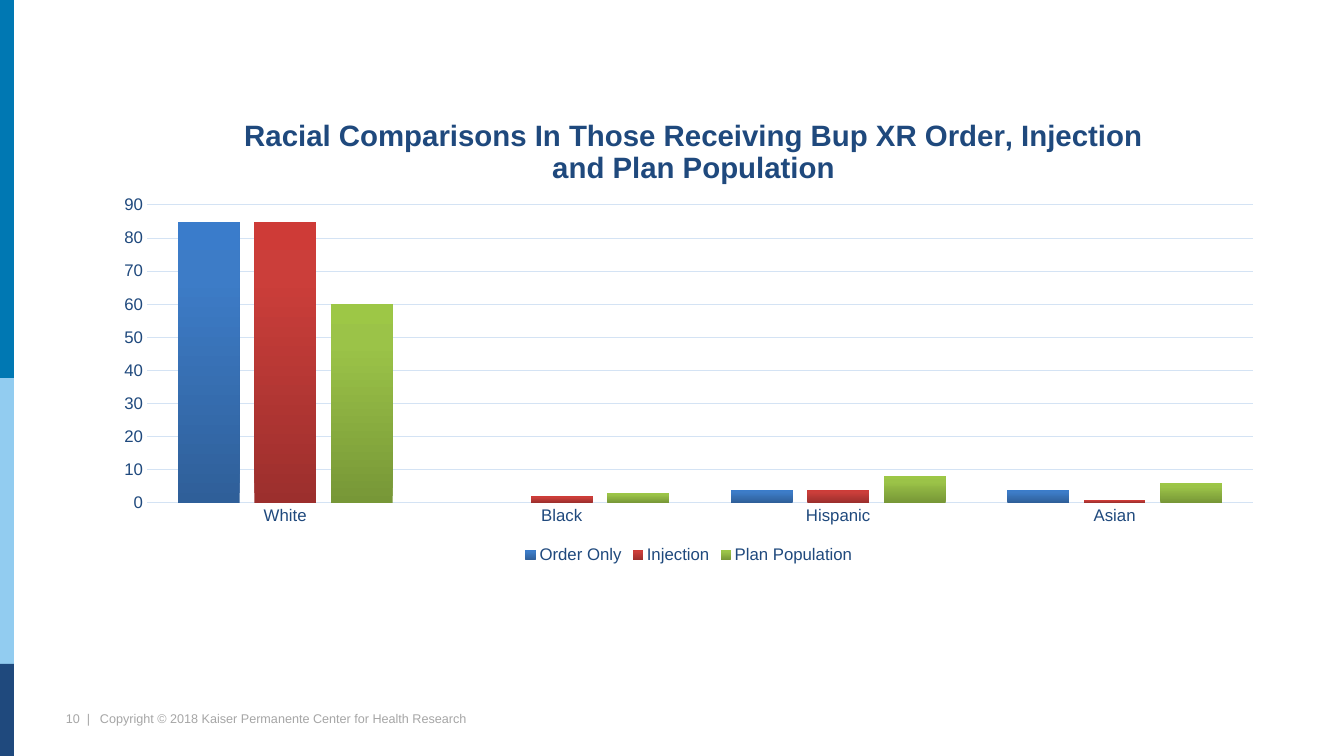
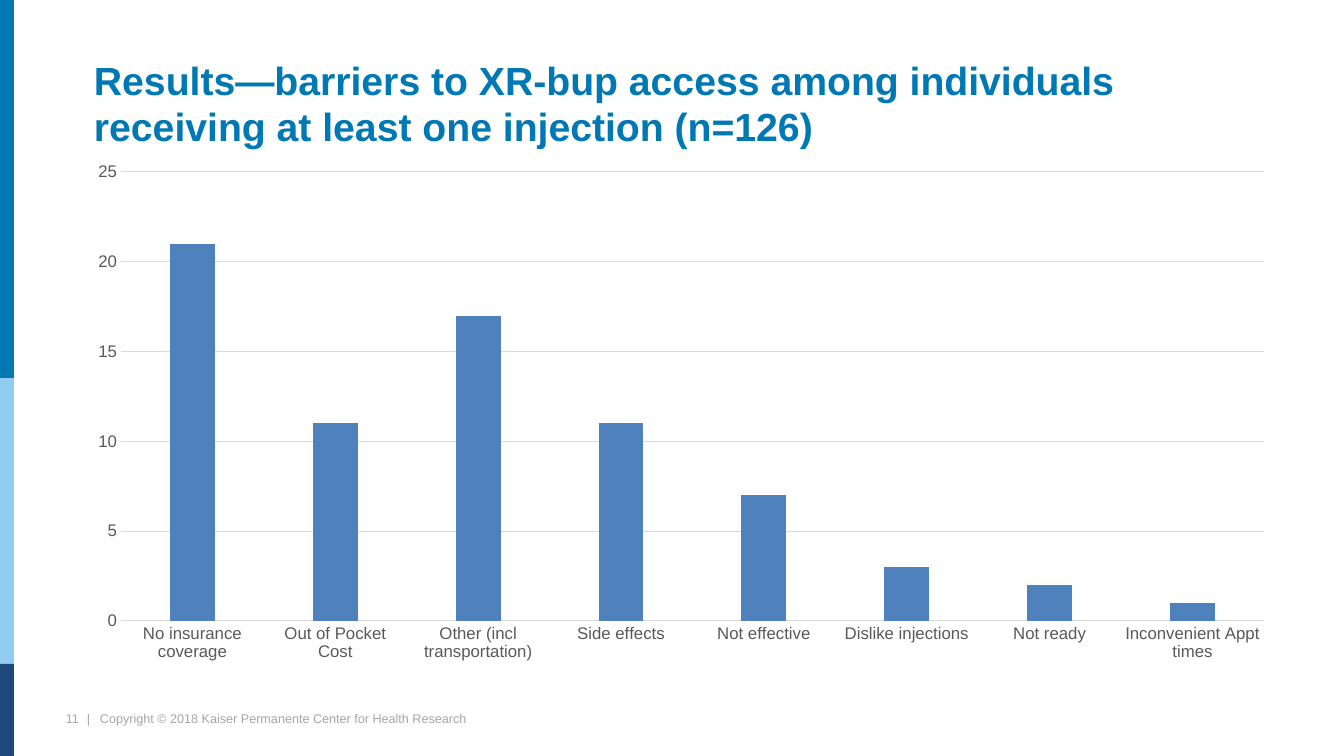
from pptx import Presentation, util as u
from pptx.chart.data import CategoryChartData
from pptx.dml.color import RGBColor
from pptx.enum import chart as ch, shapes, text
from pptx.oxml import parse_xml
from pptx.oxml.ns import nsdecls, qn

# Content
FOOT = "Copyright © 2018 Kaiser Permanente Center for Health Research"
RACE = dict(
    page=10,
    head=None,
    box=(101, 89, 1176, 479),
    plot=(147, 205, 1106, 298),
    title="Racial Comparisons In Those Receiving Bup XR Order, Injection and Plan Population",
    spot=(239, 111),
    cats=["White", "Black", "Hispanic", "Asian"],
    rows=[("Order Only", [85, 0, 4, 4], "blue"),
          ("Injection", [85, 2, 4, 1], "red"),
          ("Plan Population", [60, 3, 8, 6], "green")],
    top=90, step=10, gap=100, lap=-24, ink="navy", grid="ice",
)
BARS = dict(
    page=11,
    head="Results—barriers to XR-bup access among individuals "
         "receiving at least one injection (n=126)",
    box=(74, 153, 1215, 518),
    plot=(121, 172, 1143, 449),
    title=None,
    cats=["No insurance coverage", "Out of Pocket Cost",
          "Other (incl transportation)", "Side effects", "Not effective",
          "Dislike injections", "Not ready", "Inconvenient Appt times"],
    rows=[("Series 1", [21, 11, 17, 11, 7, 3, 2, 1], "steel")],
    top=25, step=5, gap=219, lap=-27, ink="gray", grid="mist",
)

# Theme
THEME = dict(
    font="Arial",
    size=dict(head=28, lead=33, title=21, axis=12, foot=9),
    color=dict(teal="0078B3", sky="92CCF0", navy="1F497D", ice="D4E3F4",
               gray="595959", mist="D9D9D9", foot="A6A6A6", steel="4F81BD"),
    grad=dict(blue=("2F5F99", "3D7CC7", "3A7CCB"),
              red=("9C2F2D", "CB3E3A", "CE3B37"),
              green=("779737", "9BC348", "9DC746")),
    stops=(0, 80, 100),
)
SIZE = THEME["size"]
BANDS = [("teal", 378), ("sky", 286), ("navy", 92)]
WIDE, HIGH, BAND = 1344, 756, 14
TABS = (21, 34)


def px(n):
    return u.Emu(round(n * 914400 / 100.8))


def rgb(name):
    return RGBColor.from_string(THEME["color"][name])


def style(font, size, color, bold=False):
    font.name, font.size, font.bold = THEME["font"], u.Pt(SIZE[size]), bold
    font.color.rgb = rgb(color)


def add_text(slide, box, words, wrap=True):
    frame = slide.shapes.add_textbox(*map(px, box)).text_frame
    frame.word_wrap = wrap
    para = frame.paragraphs[0]
    para.text = words
    return frame, para


# Side bands and footer shared by all slides
def add_frame(slide, page):
    y = 0
    for color, h in BANDS:
        band = slide.shapes.add_shape(shapes.MSO_SHAPE.RECTANGLE,
                                      *map(px, (0, y, BAND, h)))
        band.shadow.inherit = False
        band.fill.solid()
        band.fill.fore_color.rgb = rgb(color)
        band.line.fill.background()
        y += h
    _, para = add_text(slide, (56, 706, 426, 25), f"{page}\t|\t{FOOT}", False)
    tabs = "".join(f'<a:tab pos="{px(t)}" algn="l"/>' for t in TABS)
    para._p.get_or_add_pPr().append(
        parse_xml(f'<a:tabLst {nsdecls("a")}>{tabs}</a:tabLst>'))
    style(para.font, "foot", "foot")


def add_head(slide, words):
    frame, para = add_text(slide, (84, 53, 1176, 101), words)
    frame.vertical_anchor = text.MSO_ANCHOR.BOTTOM
    para.line_spacing = u.Pt(SIZE["lead"])
    style(para.font, "head", "teal", True)


# Fixed place of a chart part, as fractions of the chart
def layout(box, place, inner=False):
    fracs = [(place[0] - box[0]) / box[2], (place[1] - box[1]) / box[3]]
    fracs += [n / box[i + 2] for i, n in enumerate(place[2:])]
    keys = "xywh"[:len(fracs)]
    marks = '<c:layoutTarget val="inner"/>' if inner else ""
    marks += "".join(f'<c:{k}Mode val="edge"/>' for k in "xy")
    marks += "".join(f'<c:{k} val="{f:.4f}"/>' for k, f in zip(keys, fracs))
    return parse_xml(f'<c:layout {nsdecls("c")}><c:manualLayout>{marks}'
                     '</c:manualLayout></c:layout>')


def set_layout(part, new, before):
    old = part.find(qn("c:layout"))
    if old is not None:
        part.remove(old)
    part.insert(before, new)


def paint(bar, color):
    if color not in THEME["grad"]:
        bar.format.fill.solid()
        bar.format.fill.fore_color.rgb = rgb(color)
        return
    bar.format.fill.gradient()
    bar.format.fill.gradient_angle = 90
    stops = bar._element.find(".//" + qn("a:gsLst"))
    for old in list(stops):
        stops.remove(old)
    for pos, tone in zip(THEME["stops"], THEME["grad"][color]):
        stops.append(parse_xml(f'<a:gs {nsdecls("a")} pos="{pos * 1000}">'
                               f'<a:srgbClr val="{tone}"/></a:gs>'))


def rule(line, color):
    line.color.rgb = rgb(color)
    line.width = u.Pt(0.75)


def add_bars(slide, d):
    data = CategoryChartData(number_format="0")
    data.categories = d["cats"]
    for name, vals, _ in d["rows"]:
        data.add_series(name, vals)
    chart = slide.shapes.add_chart(ch.XL_CHART_TYPE.COLUMN_CLUSTERED,
                                   *map(px, d["box"]), data).chart
    style(chart.font, "axis", d["ink"])

    # Title and legend
    chart.has_title = bool(d["title"])
    if d["title"]:
        para = chart.chart_title.text_frame.paragraphs[0]
        para.text = d["title"]
        style(para.font, "title", d["ink"], True)
        set_layout(chart.chart_title._element, layout(d["box"], d["spot"]), 1)
    chart.has_legend = len(d["rows"]) > 1
    if chart.has_legend:
        chart.legend.position = ch.XL_LEGEND_POSITION.BOTTOM
        chart.legend.include_in_layout = False
        style(chart.legend.font, "axis", d["ink"])

    # Axes
    cat, val = chart.category_axis, chart.value_axis
    for axis in (cat, val):
        axis.major_tick_mark = axis.minor_tick_mark = ch.XL_TICK_MARK.NONE
        style(axis.tick_labels.font, "axis", d["ink"])
    rule(cat.format.line, d["grid"])
    val.format.line.fill.background()
    val.has_major_gridlines = True
    rule(val.major_gridlines.format.line, d["grid"])
    val.minimum_scale, val.maximum_scale = 0, d["top"]
    val.major_unit = d["step"]

    # Bars
    plot = chart.plots[0]
    plot.gap_width, plot.overlap = d["gap"], d["lap"]
    plot.vary_by_categories = False
    for bar, (_, _, color) in zip(plot.series, d["rows"]):
        paint(bar, color)
    area = chart._chartSpace.find(".//" + qn("c:plotArea"))
    set_layout(area, layout(d["box"], d["plot"], True), 0)


def main():
    deck = Presentation()
    deck.slide_width, deck.slide_height = px(WIDE), px(HIGH)
    for d in (RACE, BARS):
        slide = deck.slides.add_slide(deck.slide_layouts[6])
        add_frame(slide, d["page"])
        if d["head"]:
            add_head(slide, d["head"])
        add_bars(slide, d)
    deck.save("out.pptx")


if __name__ == "__main__":
    main()
